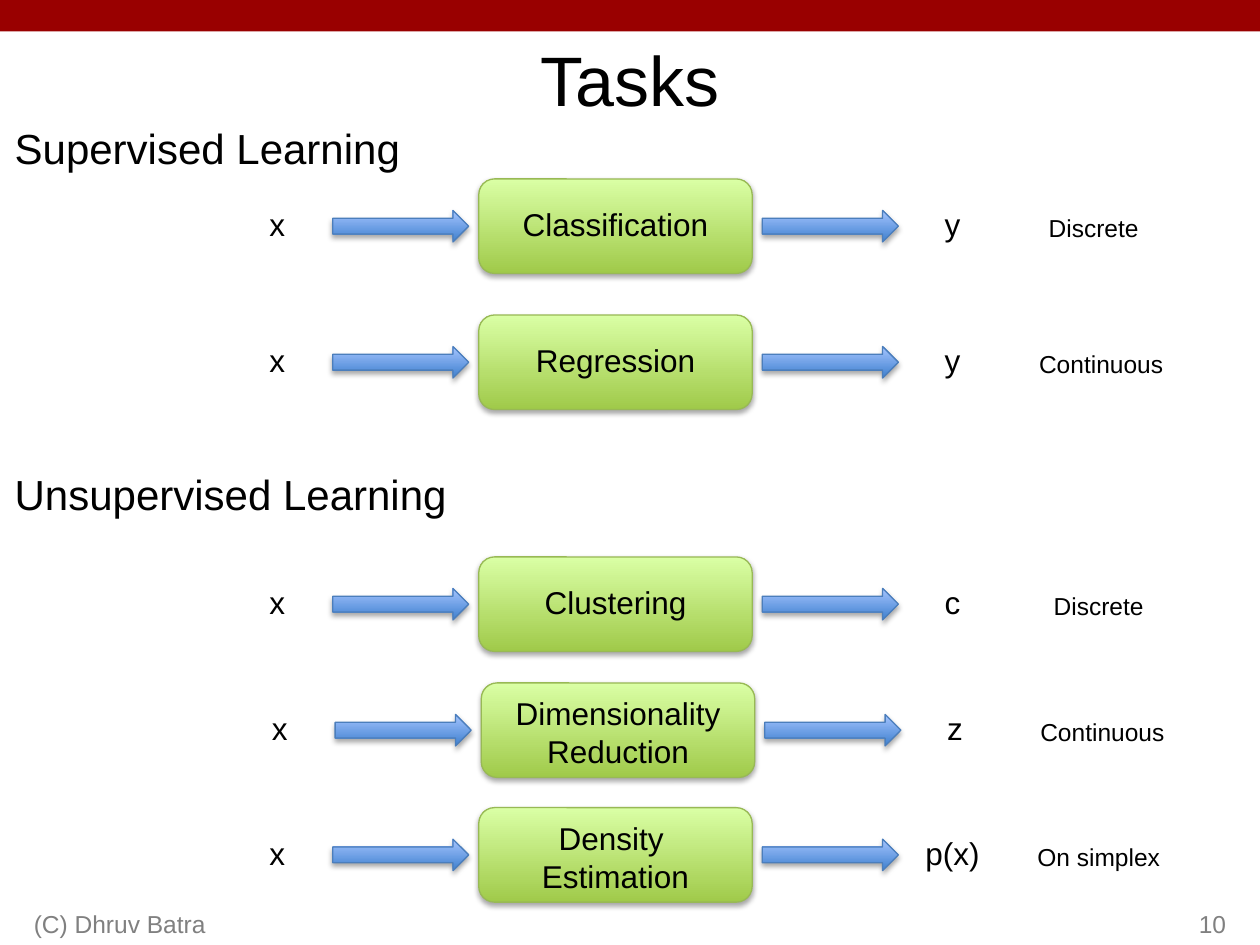
from dataclasses import dataclass

from lxml import etree
from pptx import Presentation
from pptx.dml.color import RGBColor
from pptx.enum.shapes import MSO_SHAPE
from pptx.enum.text import MSO_ANCHOR, MSO_AUTO_SIZE, PP_ALIGN
from pptx.oxml.ns import qn
from pptx.util import Inches, Pt

LEFT, CENTER, RIGHT = PP_ALIGN.LEFT, PP_ALIGN.CENTER, PP_ALIGN.RIGHT
TOP, MIDDLE, BOTTOM = MSO_ANCHOR.TOP, MSO_ANCHOR.MIDDLE, MSO_ANCHOR.BOTTOM
GROW = MSO_AUTO_SIZE.SHAPE_TO_FIT_TEXT
RECT, ROUND_RECT = MSO_SHAPE.RECTANGLE, MSO_SHAPE.ROUNDED_RECTANGLE
ARROW = MSO_SHAPE.RIGHT_ARROW

BLACK, GRAY, RED = "000000", "808080", "990000"
BOX_LEFT, BOX_W, BOX_H = 3.8, 2.17, 0.75
ARROW_W, ARROW_H = 1.08, 0.25
INPUT_CENTER, OUTPUT_CENTER = 2.2, 7.56


@dataclass
class Style:
    bottom: str
    top: str
    line: str


@dataclass
class Task:
    name: str
    top: float
    output: str
    output_w: float
    note: str
    note_center: float
    note_w: float
    shift: float = 0


GREEN = Style("A0CA4A", "DAFFA5", "98B955")
BLUE = Style("3F80CE", "A4C4FF", "4B7EBC")

TASKS = [
    Task("Classification", 1.42, "y", 0.34, "Discrete", 8.68, 0.92),
    Task("Regression", 2.5, "y", 0.34, "Continuous", 8.74, 1.2),
    Task("Clustering", 4.42, "c", 0.33, "Discrete", 8.72, 0.92),
    Task("Dimensionality\nReduction", 5.42, "z", 0.33, "Continuous", 8.75, 1.2, 0.02),
    Task("Density \nEstimation", 6.41, "p(x)", 0.64, "On simplex", 8.72, 1.18),
]
HEADINGS = [("Supervised Learning", 0.92, 3.29), ("Unsupervised Learning", 3.67, 3.66)]


def rgb(color: str) -> RGBColor:
    return RGBColor.from_string(color)


def write(tf, text: str, size: float, color: str = BLACK, align=CENTER) -> None:
    p = tf.paragraphs[0]
    p.text = text
    p.alignment = align
    for r in p.runs:
        for name, value in {"name": "Arial", "size": Pt(size)}.items():
            setattr(r.font, name, value)
        r.font.color.rgb = rgb(color)


def add_text(s, text: str, left: float, top: float, width: float, height: float,
             size: float, color: str = BLACK, align=CENTER, anchor=TOP,
             wrap: bool = False, auto_size=GROW) -> None:
    tf = s.shapes.add_textbox(*map(Inches, (left, top, width, height))).text_frame
    write(tf, text, size, color, align)
    frame = {"word_wrap": wrap, "auto_size": auto_size, "vertical_anchor": anchor}
    for name, value in frame.items():
        setattr(tf, name, value)


def add_shadow(sp) -> None:
    """Give the shape a soft shadow straight below it."""
    sp.shadow.inherit = False
    effects = sp._element.spPr.find(qn("a:effectLst"))
    shadow = etree.SubElement(effects, qn("a:outerShdw"), blurRad=str(Pt(3.1)),
                              dist=str(Pt(1.8)), dir="5400000", rotWithShape="0")
    color = etree.SubElement(shadow, qn("a:srgbClr"), val=BLACK)
    etree.SubElement(color, qn("a:alpha"), val="35000")


def add_glossy(s, kind, left: float, top: float, width: float, height: float,
               style: Style) -> None:
    """Add a shape with a vertical gradient, a thin line and a shadow."""
    sp = s.shapes.add_shape(kind, *map(Inches, (left, top, width, height)))
    sp.fill.gradient()
    sp.fill.gradient_angle = 90
    for stop, position, color in zip(sp.fill.gradient_stops, (0, 1),
                                     (style.bottom, style.top)):
        stop.position = position
        stop.color.rgb = rgb(color)
    sp.line.color.rgb = rgb(style.line)
    sp.line.width = Pt(0.75)
    add_shadow(sp)


def add_task(s, task: Task) -> None:
    left = BOX_LEFT + task.shift
    middle = task.top + BOX_H / 2
    label_top = task.top + 0.16
    two_lines = "\n" in task.name
    add_glossy(s, ROUND_RECT, left, task.top, BOX_W, BOX_H, GREEN)
    add_text(s, task.name, left, task.top + (0.04 if two_lines else 0.16), BOX_W,
             0.71 if two_lines else 0.4, 18, wrap=True)
    for arrow_left in (left - 0.08 - ARROW_W, left + BOX_W + 0.08):
        add_glossy(s, ARROW, arrow_left, middle - ARROW_H / 2, ARROW_W, ARROW_H, BLUE)
    for text, center, width in (("x", INPUT_CENTER, 0.33),
                                (task.output, OUTPUT_CENTER, task.output_w)):
        add_text(s, text, center + task.shift - width / 2, label_top, width, 0.4, 18)
    add_text(s, task.note, task.note_center - task.note_w / 2, task.top + 0.22,
             task.note_w, 0.34, 14)


def add_title(s, text: str) -> None:
    title = s.shapes.title
    place = {"left": 0.75, "top": 0.25, "width": 8.5, "height": 0.75}
    for name, value in place.items():
        setattr(title, name, Inches(value))
    title.text_frame.vertical_anchor = MIDDLE
    write(title.text_frame, text, 40)


def main() -> None:
    prs = Presentation()
    prs.slide_width, prs.slide_height = Inches(10), Inches(7.5)
    s = prs.slides.add_slide(prs.slide_layouts[5])

    band = s.shapes.add_shape(RECT, 0, 0, prs.slide_width, Inches(0.25))
    band.fill.solid()
    band.fill.fore_color.rgb = rgb(RED)
    band.line.fill.background()
    band.shadow.inherit = False

    add_title(s, "Tasks")
    for text, left, width, align in (("(C) Dhruv Batra", 0.17, 3.17, LEFT),
                                     ("10", 7.75, 2.08, RIGHT)):
        add_text(s, text, left, 7, width, 0.5, 14, GRAY, align, BOTTOM,
                 wrap=True, auto_size=MSO_AUTO_SIZE.NONE)
    for text, top, width in HEADINGS:
        add_text(s, text, 0, top, width, 0.5, 24)
    for task in TASKS:
        add_task(s, task)

    prs.save("out.pptx")


if __name__ == "__main__":
    main()
